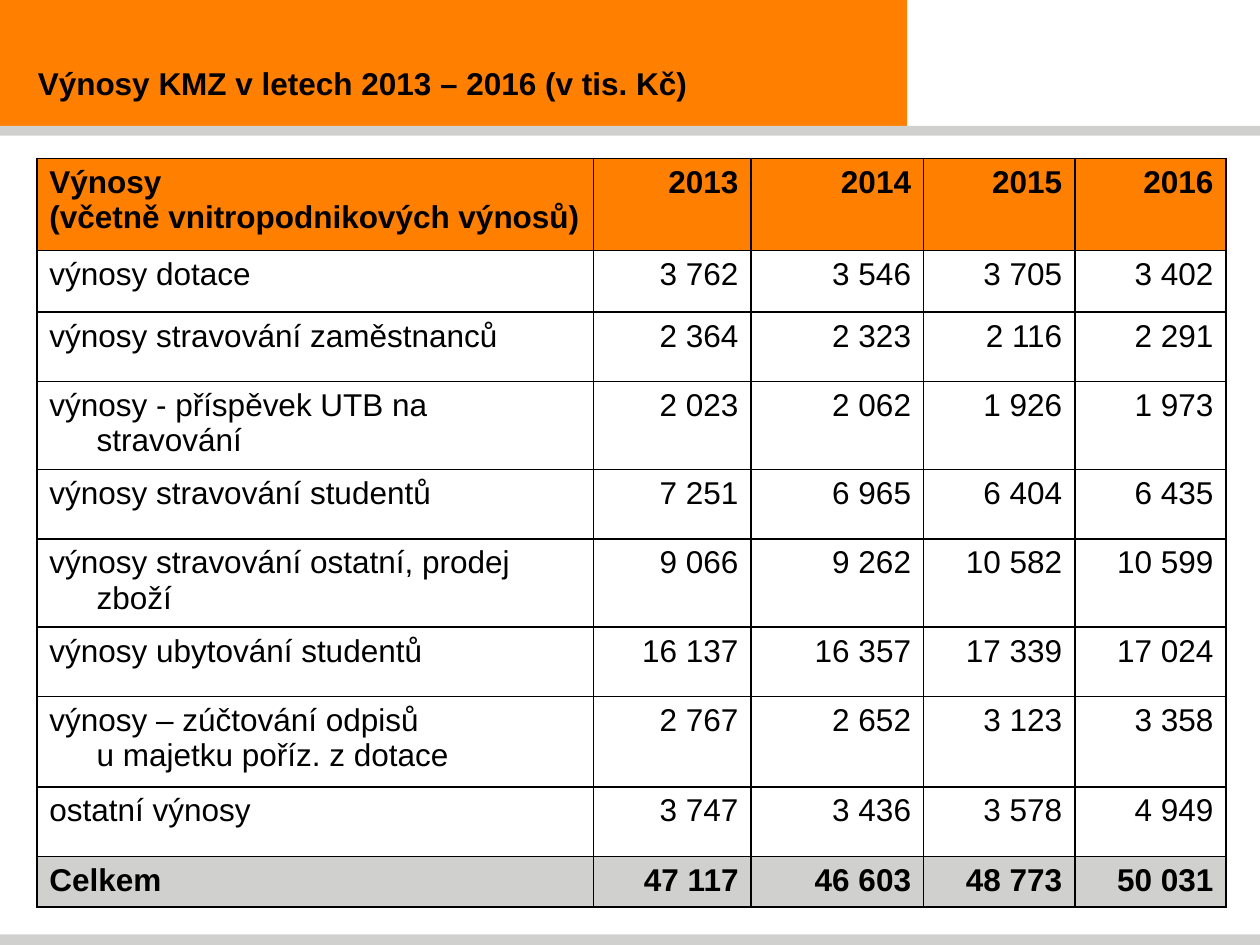
from lxml.etree import SubElement
from pptx import Presentation
from pptx.dml.color import RGBColor
from pptx.enum.shapes import MSO_SHAPE
from pptx.enum.text import MSO_ANCHOR, PP_ALIGN
from pptx.oxml.ns import qn
from pptx.util import Pt

ORANGE, GREY, BLACK = "FF8001", "D0D0CE", "000000"
WIDTH, HEIGHT = 720, 540

COLS = [318.2, 90, 98.6, 86.4, 86.4]
ROWS = [52.6, 35.3, 39.6, 50.4, 39.6, 50.4, 39.6, 51.8, 39.6, 28.8]
DATA = [
    ["Výnosy\n(včetně vnitropodnikových výnosů)", "2013", "2014", "2015", "2016"],
    ["výnosy dotace", "3 762", "3 546", "3 705", "3 402"],
    ["výnosy stravování zaměstnanců", "2 364", "2 323", "2 116", "2 291"],
    ["výnosy - příspěvek UTB na stravování", "2 023", "2 062", "1 926", "1 973"],
    ["výnosy stravování studentů", "7 251", "6 965", "6 404", "6 435"],
    ["výnosy stravování ostatní, prodej zboží", "9 066", "9 262", "10 582", "10 599"],
    ["výnosy ubytování studentů", "16 137", "16 357", "17 339", "17 024"],
    ["výnosy – zúčtování odpisů\vu majetku poříz. z dotace", "2 767", "2 652", "3 123", "3 358"],
    ["ostatní výnosy", "3 747", "3 436", "3 578", "4 949"],
    ["Celkem", "47 117", "46 603", "48 773", "50 031"],
]


def paint(fill, color):
    fill.solid()
    fill.fore_color.rgb = RGBColor.from_string(color)


def style(para, bold, align, left, indent):
    props = para._p.get_or_add_pPr()
    props.set("marL", str(Pt(left)))
    props.set("indent", str(Pt(indent)))
    para.alignment = align
    font = para.font
    font.name, font.size, font.bold = "Arial", Pt(18), bold
    font.color.rgb = RGBColor.from_string(BLACK)


def add_bar(slide, x, y, w, h, color):
    bar = slide.shapes.add_shape(MSO_SHAPE.RECTANGLE, Pt(x), Pt(y), Pt(w), Pt(h))
    bar.shadow.inherit = False
    paint(bar.fill, color)
    bar.line.fill.background()


def add_frame(slide, w, h):
    # Orange title band, grey rules under it and at the foot
    add_bar(slide, 0, 0, 518.4, 72, ORANGE)
    add_bar(slide, 0, h - 6, w, 6, GREY)
    add_bar(slide, 0, 72, w, 5.5, GREY)


def add_title(slide, x, y, w, h, text):
    title = slide.shapes.title
    title.left, title.top, title.width, title.height = Pt(x), Pt(y), Pt(w), Pt(h)
    # Bring the title in front of the band
    slide.shapes.element.append(title.element)
    frame = title.text_frame
    frame.text = text
    frame.vertical_anchor = MSO_ANCHOR.MIDDLE
    style(frame.paragraphs[0], True, PP_ALIGN.LEFT, 14.4, 0)


def add_border(cell):
    props = cell._tc.get_or_add_tcPr()
    for side in ("a:lnL", "a:lnR", "a:lnT", "a:lnB"):
        line = SubElement(props, qn(side), w=str(Pt(1)))
        solid = SubElement(line, qn("a:solidFill"))
        SubElement(solid, qn("a:srgbClr"), val=BLACK)


def add_grid(slide, x, y):
    table = slide.shapes.add_table(
        len(ROWS), len(COLS), Pt(x), Pt(y), Pt(sum(COLS)), Pt(sum(ROWS))).table
    table.first_row = table.horz_banding = False
    for col, width in zip(table.columns, COLS):
        col.width = Pt(width)
    for row, height in zip(table.rows, ROWS):
        row.height = Pt(height)

    # Header and total rows are bold and filled
    fills = {0: ORANGE, len(ROWS) - 1: GREY}
    for r, values in enumerate(DATA):
        for c, value in enumerate(values):
            cell = table.cell(r, c)
            add_border(cell)
            if r in fills:
                paint(cell.fill, fills[r])
            else:
                cell.fill.background()
            cell.text = value
            align = PP_ALIGN.RIGHT if c else PP_ALIGN.LEFT
            for para in cell.text_frame.paragraphs:
                style(para, r in fills, align, 27, -27)


def main():
    deck = Presentation()
    deck.slide_width, deck.slide_height = Pt(WIDTH), Pt(HEIGHT)
    slide = deck.slides.add_slide(deck.slide_layouts[5])
    add_frame(slide, WIDTH, HEIGHT)
    add_title(slide, 0, 23, 518.4, 49, "Výnosy KMZ v letech 2013 – 2016 (v tis. Kč)")
    add_grid(slide, 21, 90.5)
    deck.save("out.pptx")


if __name__ == "__main__":
    main()
